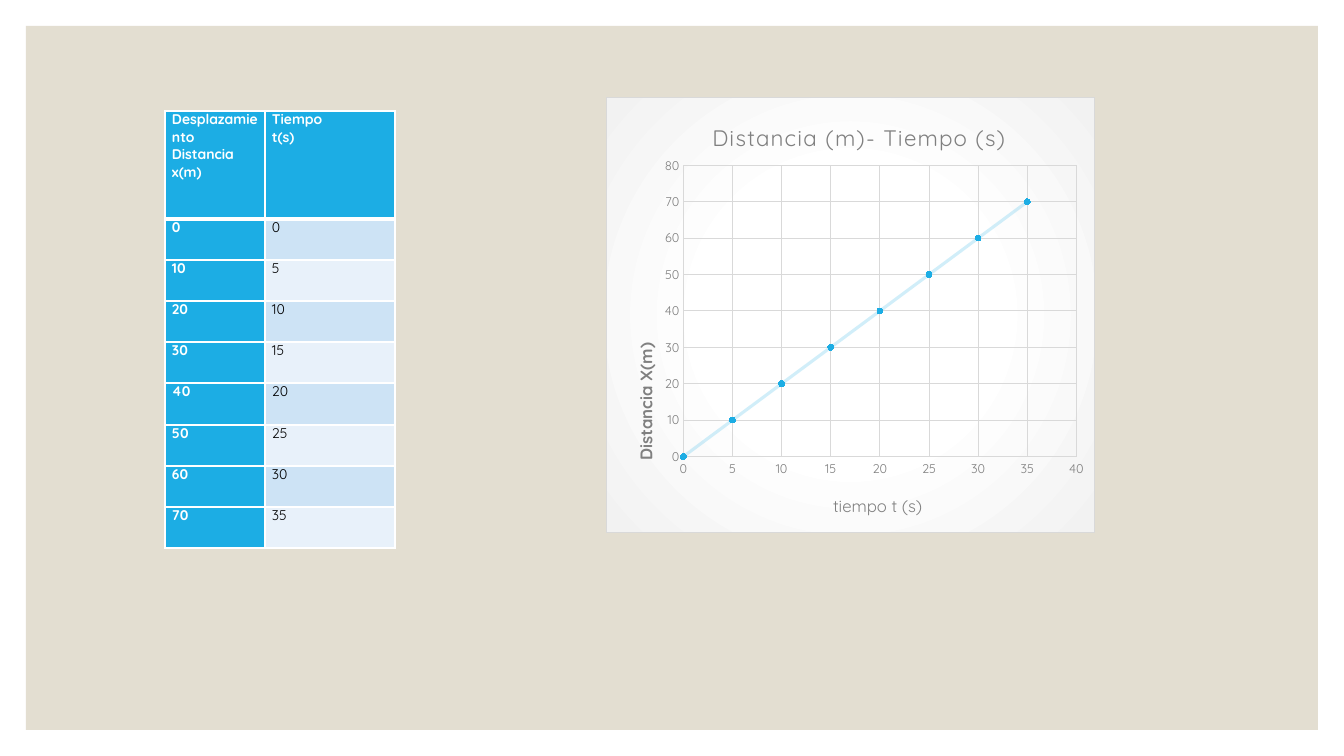
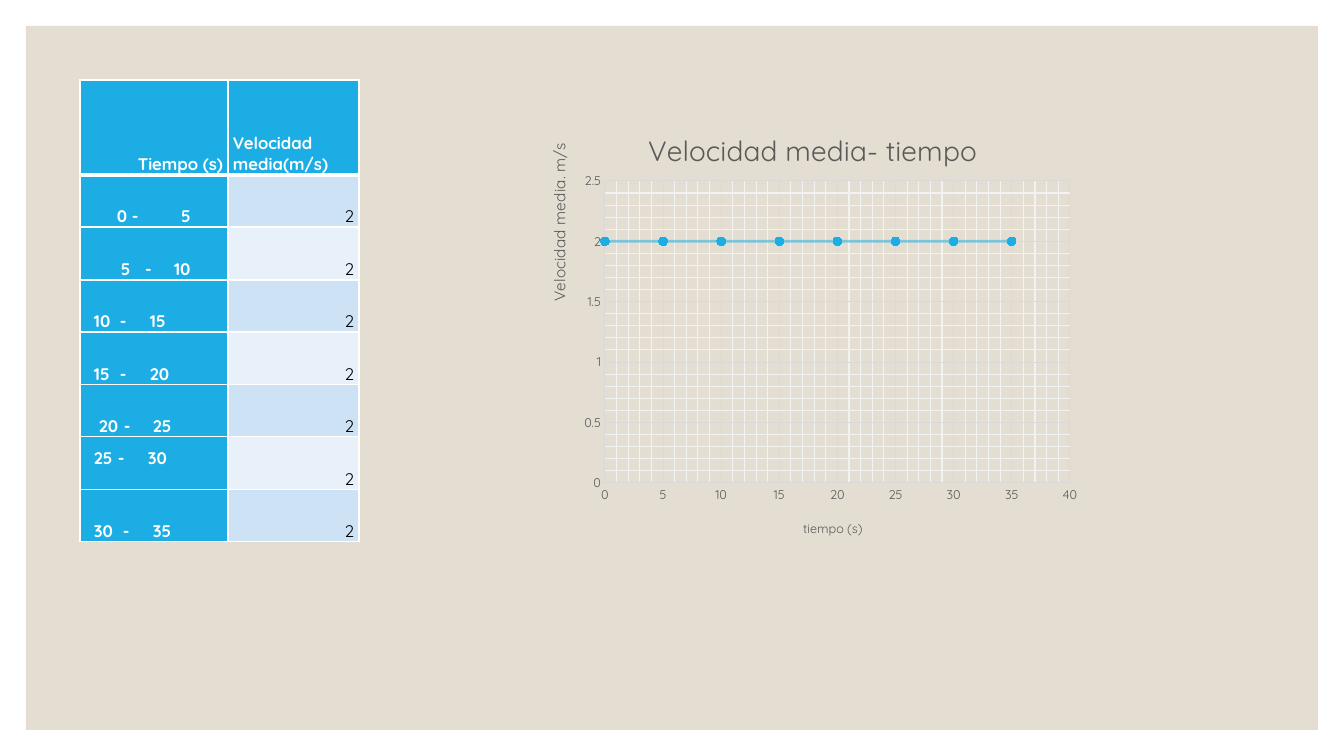
from pptx import Presentation
from pptx import util as u
from pptx.chart.data import XyChartData
from pptx.dml.color import RGBColor
from pptx.enum import chart as ch, shapes, text
from pptx.oxml import parse_xml
from pptx.oxml.ns import nsdecls, qn
from lxml import etree

NS = nsdecls("a", "c")
NO_FILL = f"<c:spPr {NS}><a:noFill/><a:ln><a:noFill/></a:ln></c:spPr>"
GLOW = f"""<c:spPr {NS}><a:gradFill>
<a:gsLst><a:gs pos="0"><a:srgbClr val="FFFFFF"/></a:gs>
<a:gs pos="43000"><a:srgbClr val="FFFFFF"/></a:gs>
<a:gs pos="100000"><a:srgbClr val="F2F2F2"/></a:gs></a:gsLst>
<a:path path="circle"><a:fillToRect l="50000" t="50000" r="50000" b="50000"/></a:path>
</a:gradFill><a:ln w="9525"><a:solidFill><a:srgbClr val="D9D9D9"/></a:solidFill></a:ln></c:spPr>"""


def px(n):
    return u.Emu(round(n * 914400 / 100.8))


def rgb(code):
    return RGBColor.from_string(code)


class Deck:
    """Hold the shared style and the current slide."""
    FONT = "Quicksand"
    SAND, BLUE, WHITE, BLACK = "E3DED1", "1CADE4", "FFFFFF", "000000"
    BANDS = "CDE3F5", "E8F1FA"
    GRID, FINE_GRID = "D9D9D9", "F2F2F2"

    def __init__(self):
        self.prs = Presentation()
        self.prs.slide_width, self.prs.slide_height = px(1344), px(756)

    def slide(self):
        self.s = self.prs.slides.add_slide(self.prs.slide_layouts[6])
        sp = self.s.shapes.add_shape(shapes.MSO_SHAPE.RECTANGLE, px(26), px(26), px(1292), px(704))
        sp.shadow.inherit = False
        sp.fill.solid()
        sp.fill.fore_color.rgb = rgb(self.SAND)
        sp.line.fill.background()

    def style(self, font, size, color, bold=False):
        font.name, font.size, font.bold = self.FONT, u.Pt(size), bold
        font.color.rgb = rgb(color)

    def borders(self, cell, bottom):
        for side, width in (("L", 1), ("R", 1), ("T", 1), ("B", bottom)):
            cell._tc.get_or_add_tcPr().append(parse_xml(
                f'<a:ln{side} {NS} w="{width * 12700}"><a:solidFill>'
                f'<a:srgbClr val="{self.WHITE}"/></a:solidFill></a:ln{side}>'))

    def table(self, x, y, widths, head, body, rows, size, inset, anchor):
        n = len(rows) - 1
        edges = [round(body * i / n) for i in range(n + 1)]
        heights = [head] + [b - a for a, b in zip(edges, edges[1:])]
        frame = self.s.shapes.add_table(len(rows), len(widths), px(x), px(y),
                                        px(sum(widths)), px(sum(heights)))
        table = frame.table
        table.first_row = table.horz_banding = False
        for column, width in zip(table.columns, widths):
            column.width = px(width)
        for i, (row, height) in enumerate(zip(rows, heights)):
            table.rows[i].height = px(height)
            for j, words in enumerate(row):
                cell = table.cell(i, j)
                strong = i == 0 or j == 0
                self.borders(cell, 1 if i else 3)
                cell.fill.solid()
                cell.fill.fore_color.rgb = rgb(self.BLUE if strong else self.BANDS[(i - 1) % 2])
                cell.margin_left = cell.margin_right = px(inset)
                cell.margin_top = cell.margin_bottom = 0
                cell.vertical_anchor = anchor
                cell.text_frame.text = words
                for p in cell.text_frame.paragraphs:
                    self.style(p.font, size, self.WHITE if strong else self.BLACK, strong)
        return table

    def tabs(self, cell, start, stops):
        cell.margin_left = px(start)
        pPr = cell.text_frame.paragraphs[0]._p.get_or_add_pPr()
        tab_list = etree.Element(qn("a:tabLst"))
        for stop in stops:
            etree.SubElement(tab_list, qn("a:tab"), pos=str(px(stop - start)), algn="l")
        pPr.insert(0, tab_list)

    def place(self, element, index, **values):
        old = element.find(qn("c:layout"))
        if old is not None:
            element.remove(old)
        layout = etree.Element(qn("c:layout"))
        manual = etree.SubElement(layout, qn("c:manualLayout"))
        for key, value in values.items():
            value = value if isinstance(value, str) else f"{value:.4f}"
            etree.SubElement(manual, qn(f"c:{key}"), val=value)
        element.insert(index, layout)

    def title(self, title, box, words, at, size, color, bold=False, spacing=0, turn=0):
        x, y, w, h = box
        tf = title.text_frame
        tf.text = words
        p = tf.paragraphs[0]
        self.style(p.font, size, color, bold)
        p._p.pPr.find(qn("a:defRPr")).set("spc", str(spacing))
        body = tf._txBody.find(qn("a:bodyPr"))
        body.set("rot", str(turn * 60000))
        body.set("vert", "horz")
        self.place(title._element, 1, xMode="edge", yMode="edge",
                   x=(at[0] - x) / w, y=(at[1] - y) / h)

    def axis(self, axis, top, step, color, fine):
        axis.minimum_scale, axis.maximum_scale, axis.major_unit = 0, top, step
        axis.major_tick_mark = axis.minor_tick_mark = ch.XL_TICK_MARK.NONE
        self.style(axis.tick_labels.font, 9, color)
        axis.has_major_gridlines = True
        axis.major_gridlines.format.line.width = u.Pt(0.75)
        axis.major_gridlines.format.line.color.rgb = rgb(self.GRID)
        if fine:
            axis.has_minor_gridlines = True
            axis.minor_unit = step / 5
            axis._element.find(qn("c:minorGridlines")).append(parse_xml(
                f'<c:spPr {NS}><a:ln w="9525"><a:solidFill>'
                f'<a:srgbClr val="{self.FINE_GRID}"/></a:solidFill></a:ln></c:spPr>'))

    def scatter(self, box, plot, points, y_top, y_step, color, titles, line, marker, frame, fine=False):
        data = XyChartData()
        series = data.add_series("Series 1")
        for point in points:
            series.add_data_point(*point)
        chart = self.s.shapes.add_chart(ch.XL_CHART_TYPE.XY_SCATTER_SMOOTH,
                                        *map(px, box), data).chart
        chart.has_legend = False
        chart.plots[0].vary_by_categories = False
        self.style(chart.font, 10, self.BLACK)
        x_axis, y_axis = chart.category_axis, chart.value_axis
        self.axis(x_axis, 40, 5, color, fine)
        self.axis(y_axis, y_top, y_step, color, fine)
        x_axis.format.line.color.rgb = rgb(self.GRID)
        x_axis.format.line.width = u.Pt(0.75)
        y_axis.format.line.fill.background()
        chart.has_title = True
        owners = chart.chart_title, x_axis.axis_title, y_axis.axis_title
        for owner, options in zip(owners, titles):
            self.title(owner, box, color=color, **options)

        root = chart.element.find(qn("c:chart"))
        root.addnext(parse_xml(frame))
        area = root.find(qn("c:plotArea"))
        area.append(parse_xml(NO_FILL))
        x, y, w, h = box
        self.place(area, 0, layoutTarget="inner", xMode="edge", yMode="edge",
                   x=(plot[0] - x) / w, y=(plot[1] - y) / h, w=plot[2] / w, h=plot[3] / h)

        drawn = chart.plots[0].series[0]
        width, alpha = line
        drawn.format.line.width = u.Pt(width)
        drawn.format.line.color.rgb = rgb(self.BLUE)
        tint = drawn._element.find(qn("c:spPr")).find(".//" + qn("a:srgbClr"))
        etree.SubElement(tint, qn("a:alpha"), val=str(alpha * 1000))
        drawn.marker.style = ch.XL_MARKER_STYLE.CIRCLE
        drawn.marker.size = marker
        drawn.marker.format.fill.solid()
        drawn.marker.format.fill.fore_color.rgb = rgb(self.BLUE)
        drawn.marker.format.line.color.rgb = rgb(self.BLUE)


def distance_slide(deck, times):
    deck.slide()
    points = [(t, 2 * t) for t in times]
    rows = [("Desplazamiento\nDistancia x(m)", "Tiempo\nt(s)")]
    rows += [(str(d), str(t)) for t, d in points]
    deck.table(165, 111, (100, 130), 108, 329, rows, 10, 7, text.MSO_ANCHOR.TOP)
    titles = (dict(words="Distancia (m)- Tiempo (s)", at=(708, 117), size=16, spacing=100),
              dict(words="tiempo t (s)", at=(830, 491), size=12),
              dict(words="Distancia X(m)", at=(630, 340), size=12, bold=True, turn=-90))
    deck.scatter((606, 97, 489, 436), (683, 165, 394, 292), points, 80, 10, "808080",
                 titles, (2.25, 20), 4, GLOW)


def speed_slide(deck, times):
    deck.slide()
    rows = [("Tiempo (s)", "Velocidad media(m/s)")]
    rows += [(f"{a}\t-\t{b}", "2") for a, b in zip(times, times[1:])]
    table = deck.table(80, 80, (148, 131), 95, 367, rows, 12, 5, text.MSO_ANCHOR.BOTTOM)
    table.cell(0, 0).text_frame.paragraphs[0].alignment = text.PP_ALIGN.RIGHT
    starts = [(37, 52, 101), (41, 65, 94), (14, 40, 70), (14, 40, 70),
              (19, 44, 73), (14, 38, 68), (14, 43, 73)]
    for i, (start, *stops) in enumerate(starts, 1):
        deck.tabs(table.cell(i, 0), start, stops)
        table.cell(i, 1).text_frame.paragraphs[0].alignment = text.PP_ALIGN.RIGHT
    table.cell(6, 0).margin_bottom = px(21)
    titles = (dict(words="Velocidad media- tiempo", at=(643, 125), size=20),
              dict(words="tiempo (s)", at=(801, 517), size=9),
              dict(words="Velocidad media. m/s", at=(545, 140), size=11, turn=-90))
    deck.scatter((525, 105, 562, 450), (605, 181, 465, 302), [(t, 2) for t in times], 2.5, 0.5,
                 "595959", titles, (2, 50), 6, NO_FILL, fine=True)


def main():
    deck = Deck()
    times = range(0, 40, 5)
    distance_slide(deck, times)
    speed_slide(deck, times)
    deck.prs.save("out.pptx")


if __name__ == "__main__":
    main()
